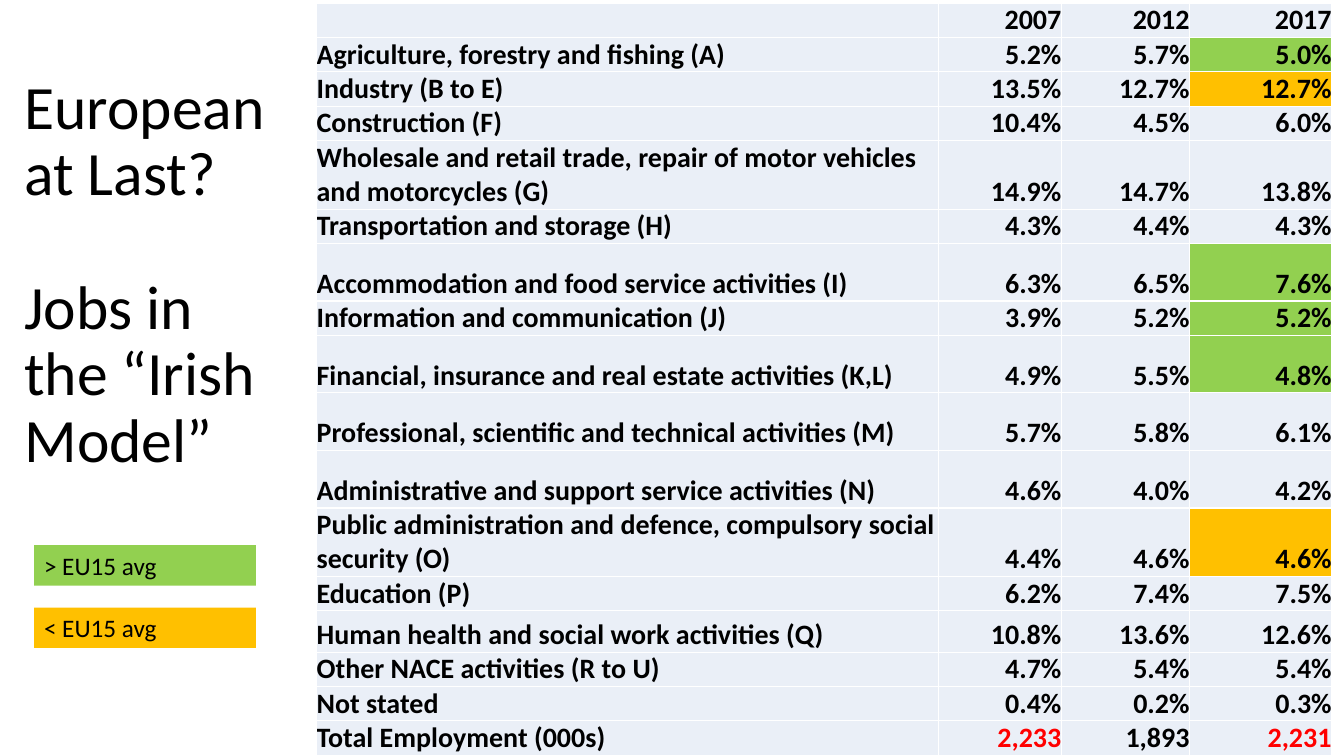
from lxml import etree
from pptx import Presentation
from pptx.dml.color import RGBColor
from pptx.enum import shapes, text
from pptx.oxml import ns
from pptx.util import Cm, Pt

PALE, ABOVE, BELOW = "EAEFF7", "92D050", "FFC000"
WHITE, BLACK, RED = "FFFFFF", "000000", "FF0000"

HEADINGS = ["European at Last?", "Jobs in the “Irish Model”"]
LEGEND = [("> EU15 avg", ABOVE), ("< EU15 avg", BELOW)]

LOW, MEDIUM, HIGH, DOUBLE = 0.74, 1.04, 1.45, 1.7
# sector, 2007, 2012, 2017, row height in cm, fill of the 2017 cell
SECTORS = [
    ("", "2007", "2012", "2017", 0.79, PALE),
    ("Agriculture, forestry and fishing (A)", "5.2%", "5.7%", "5.0%", LOW, ABOVE),
    ("Industry (B to E)", "13.5%", "12.7%", "12.7%", LOW, BELOW),
    ("Construction (F)", "10.4%", "4.5%", "6.0%", LOW, PALE),
    ("Wholesale and retail trade, repair of motor vehicles and motorcycles (G)",
     "14.9%", "14.7%", "13.8%", DOUBLE, PALE),
    ("Transportation and storage (H)", "4.3%", "4.4%", "4.3%", LOW, PALE),
    ("Accommodation and food service activities (I)", "6.3%", "6.5%", "7.6%", HIGH, ABOVE),
    ("Information and communication (J)", "3.9%", "5.2%", "5.2%", LOW, ABOVE),
    ("Financial, insurance and real estate activities (K,L)",
     "4.9%", "5.5%", "4.8%", HIGH, ABOVE),
    ("Professional, scientific and technical activities (M)",
     "5.7%", "5.8%", "6.1%", HIGH, PALE),
    ("Administrative and support service activities (N)",
     "4.6%", "4.0%", "4.2%", HIGH, PALE),
    ("Public administration and defence, compulsory social security (O)",
     "4.4%", "4.6%", "4.6%", HIGH, BELOW),
    ("Education (P)", "6.2%", "7.4%", "7.5%", LOW, PALE),
    ("Human health and social work activities (Q)", "10.8%", "13.6%", "12.6%", MEDIUM, PALE),
    ("Other NACE activities (R to U)", "4.7%", "5.4%", "5.4%", LOW, PALE),
    ("Not stated", "0.4%", "0.2%", "0.3%", LOW, PALE),
    ("Total Employment (000s)", "2,233", "1,893", "2,231", LOW, PALE),
]
RED_FIGURES = {"2,233", "2,231"}
COLUMN_WIDTHS = [15.67, 3.1, 3.23, 3.58]


def colour(hex_code):
    return RGBColor.from_string(hex_code)


def paint(target, hex_code):
    target.fill.solid()
    target.fill.fore_color.rgb = colour(hex_code)


def write(paragraph, words, size, ink=BLACK, bold=False, align=text.PP_ALIGN.LEFT):
    paragraph.alignment = align
    run = paragraph.add_run()
    run.text = words
    run.font.name, run.font.size, run.font.bold = "Calibri", Pt(size), bold
    run.font.color.rgb = colour(ink)


def add_borders(cell):
    """Draw thin white lines on all four sides; call before filling the cell."""
    properties = cell._tc.get_or_add_tcPr()
    for side in ("a:lnL", "a:lnR", "a:lnT", "a:lnB"):
        line = etree.SubElement(properties, ns.qn(side), w=str(Pt(1)))
        fill = etree.SubElement(line, ns.qn("a:solidFill"))
        etree.SubElement(fill, ns.qn("a:srgbClr"), val=WHITE)


def add_title(slide):
    title = slide.shapes.title
    title.left, title.top, title.width, title.height = Cm(0.36), Cm(1.02), Cm(6.99), Cm(11.86)
    frame = title.text_frame
    frame.word_wrap = True
    frame.auto_size = text.MSO_AUTO_SIZE.NONE
    frame.vertical_anchor = text.MSO_ANCHOR.MIDDLE
    for i, heading in enumerate(HEADINGS):
        paragraph = frame.add_paragraph() if i else frame.paragraphs[0]
        paragraph.line_spacing = 0.9
        paragraph.space_before = Pt(48 if i else 0)
        write(paragraph, heading, 44)


def add_jobs_table(slide):
    frame = slide.shapes.add_table(len(SECTORS), len(COLUMN_WIDTHS),
                                   Cm(7.98), Cm(0.08), Cm(25.55), Cm(18.82))
    jobs = frame.table
    jobs.first_row = jobs.horz_banding = False
    for column, width in zip(jobs.columns, COLUMN_WIDTHS):
        column.width = Cm(width)
    for row, (*entries, height, latest_fill) in zip(jobs.rows, SECTORS):
        row.height = Cm(height)
        for i, (cell, entry) in enumerate(zip(row.cells, entries)):
            cell.margin_left = cell.margin_right = cell.margin_top = cell.margin_bottom = 0
            cell.vertical_anchor = text.MSO_ANCHOR.BOTTOM
            add_borders(cell)
            paint(cell, latest_fill if i == 3 else PALE)
            if entry:
                write(cell.text_frame.paragraphs[0], entry, 20, bold=True,
                      ink=RED if entry in RED_FIGURES else BLACK,
                      align=text.PP_ALIGN.RIGHT if i else text.PP_ALIGN.LEFT)
    frame.height = Cm(18.82)


def add_legend(slide):
    for i, (label, fill) in enumerate(LEGEND):
        key = slide.shapes.add_shape(shapes.MSO_SHAPE.RECTANGLE, Cm(0.86),
                                     Cm(13.74 + 1.57 * i), Cm(5.59), Cm(1.02))
        key.shadow.inherit = False
        paint(key, fill)
        key.line.fill.background()
        key.text_frame.word_wrap = True
        key.text_frame.auto_size = text.MSO_AUTO_SIZE.SHAPE_TO_FIT_TEXT
        key.text_frame.vertical_anchor = text.MSO_ANCHOR.TOP
        write(key.text_frame.paragraphs[0], label, 18)


def main():
    deck = Presentation()
    deck.slide_width, deck.slide_height = Cm(33.87), Cm(19.05)
    slide = deck.slides.add_slide(deck.slide_layouts[5])
    add_title(slide)
    add_jobs_table(slide)
    add_legend(slide)
    deck.save("out.pptx")


if __name__ == "__main__":
    main()
